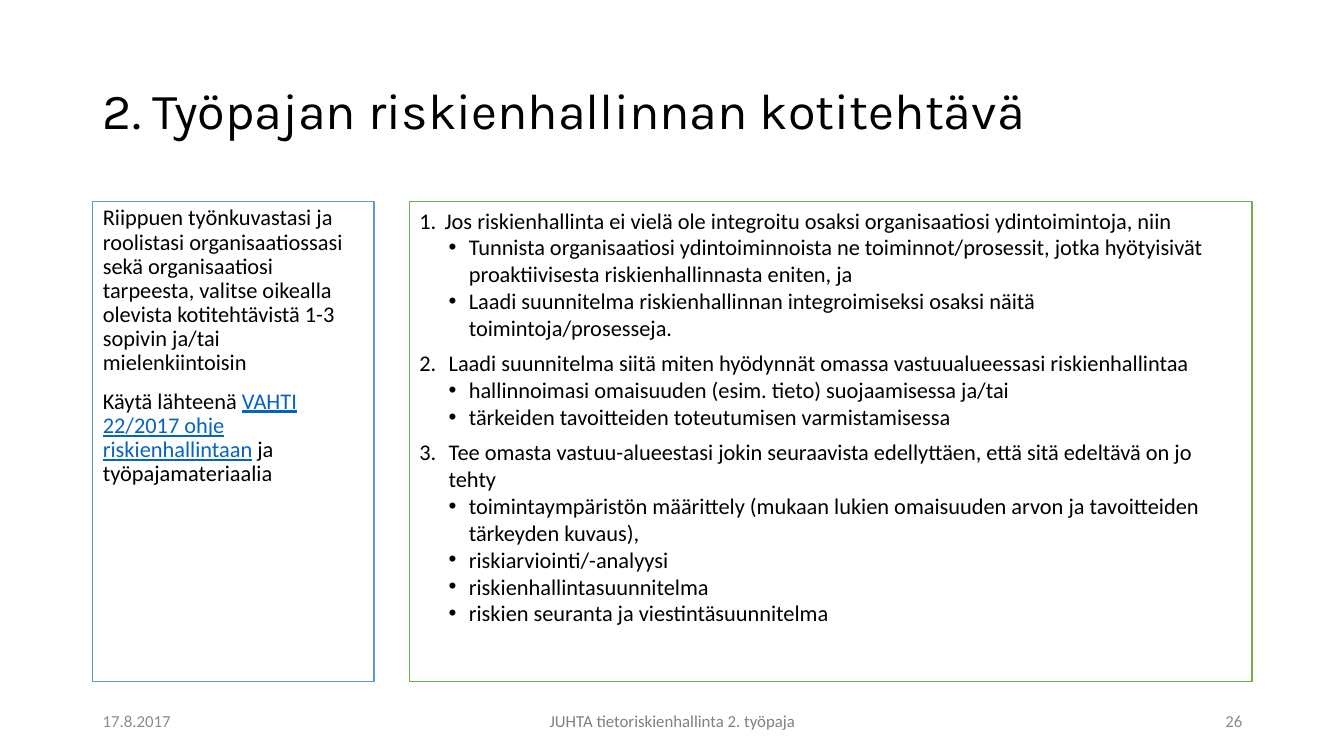
from lxml import etree
from pptx import Presentation
from pptx.dml.color import RGBColor as RGB
from pptx.enum.text import MSO_ANCHOR as Anchor, MSO_AUTO_SIZE as Fit, PP_ALIGN as Align
from pptx.oxml.ns import qn
from pptx.util import Inches, Pt

BLACK = RGB(0x00, 0x00, 0x00)
WHITE = RGB(0xFF, 0xFF, 0xFF)
BLUE = RGB(0x5B, 0x9B, 0xD5)
GREEN = RGB(0x70, 0xAD, 0x47)
LINK = RGB(0x05, 0x63, 0xC1)
GRAY = RGB(0x80, 0x80, 0x80)
PALE = RGB(0x8C, 0x8C, 0x8C)

INTRO = [
    [("Riippuen työnkuvastasi ja roolistasi organisaatiossasi sekä organisaatiosi tarpeesta, "
      "valitse oikealla olevista kotitehtävistä 1-3 sopivin ja/tai mielenkiintoisin", False)],
    [("Käytä lähteenä ", False), ("VAHTI 22/2017 ohje riskienhallintaan", True),
     (" ja työpajamateriaalia", False)],
]
TASKS = [
    ("Jos riskienhallinta ei vielä ole integroitu osaksi organisaatiosi ydintoimintoja, niin", [
        "Tunnista organisaatiosi ydintoiminnoista ne toiminnot/prosessit, jotka hyötyisivät "
        "proaktiivisesta riskienhallinnasta eniten, ja",
        "Laadi suunnitelma riskienhallinnan integroimiseksi osaksi näitä toimintoja/prosesseja."]),
    ("Laadi suunnitelma siitä miten hyödynnät omassa vastuualueessasi riskienhallintaa", [
        "hallinnoimasi omaisuuden (esim. tieto) suojaamisessa ja/tai",
        "tärkeiden tavoitteiden toteutumisen varmistamisessa"]),
    ("Tee omasta vastuu-alueestasi jokin seuraavista edellyttäen, että sitä edeltävä on jo tehty", [
        "toimintaympäristön määrittely (mukaan lukien omaisuuden arvon ja tavoitteiden "
        "tärkeyden kuvaus),",
        "riskiarviointi/-analyysi",
        "riskienhallintasuunnitelma",
        "riskien seuranta ja viestintäsuunnitelma"]),
]


def place(shape, box):
    """Move a shape to a box given in inches."""
    shape.left, shape.top, shape.width, shape.height = map(Inches, box)


def style(font, size, color, name="Calibri"):
    """Set the look of a font."""
    font.name, font.size, font.color.rgb = name, Pt(size), color


def mark(para, tag, left=0, hang=0, **attrs):
    """Give a paragraph its indent and its bullet element."""
    props = para._p.get_or_add_pPr()
    props.set("marL", str(Inches(left)))
    props.set("indent", str(-Inches(hang)))
    etree.SubElement(props, qn(tag), attrs)


def panel(shape, box, color):
    """Frame a body placeholder and return its text frame."""
    place(shape, box)
    shape.fill.solid()
    shape.fill.fore_color.rgb = WHITE
    shape.line.color.rgb = color
    shape.line.width = Pt(1)
    frame = shape.text_frame
    frame.auto_size = Fit.NONE
    frame.vertical_anchor = Anchor.TOP
    return frame


def add_para(frame, first):
    """Return the first paragraph of a frame or a new one."""
    return frame.paragraphs[0] if first else frame.add_paragraph()


def add_title(shape, box):
    """Fill the title placeholder."""
    place(shape, box)
    frame = shape.text_frame
    frame.text = "2. Työpajan riskienhallinnan kotitehtävä"
    frame.auto_size = Fit.NONE
    frame.vertical_anchor = Anchor.MIDDLE
    para = frame.paragraphs[0]
    para.alignment = Align.LEFT
    para.line_spacing = 0.9
    style(para.runs[0].font, 36, BLACK, "Karla")


def add_intro(shape, box):
    """Fill the left panel with instructions."""
    frame = panel(shape, box, BLUE)
    for i, parts in enumerate(INTRO):
        para = add_para(frame, i == 0)
        mark(para, "a:buNone")
        para.line_spacing = 0.9
        para.space_before = Pt(10 if i else 0)
        for text, link in parts:
            run = para.add_run()
            run.text = text
            style(run.font, 16, LINK if link else BLACK)
            run.font.underline = link


def add_tasks(shape, box):
    """Fill the right panel with numbered tasks and their points."""
    frame = panel(shape, box, GREEN)
    for num, (task, points) in enumerate(TASKS, 1):
        for i, text in enumerate([task, *points]):
            para = add_para(frame, num == 1 and i == 0)
            para.text = text
            if i:
                para.level = 1
                mark(para, "a:buChar", 0.49, 0.2, char="•")
            else:
                left = 0.25 if num == 1 else 0.29
                mark(para, "a:buAutoNum", left, left, type="arabicPeriod", startAt=str(num))
            para.line_spacing = 1.0
            para.space_before = Pt(6 if num > 1 and i == 0 else 0)
            style(para.runs[0].font, 16, BLACK)


def add_foot(slide, box):
    """Place the date, the event and the page number along a strip."""
    left, top, width, high = box
    cells = [
        ("17.8.2017", left, 3, Align.LEFT, PALE),
        ("JUHTA tietoriskienhallinta 2. työpaja", left + width / 2 - 2.25, 4.5, Align.CENTER, GRAY),
        ("26", left + width - 3, 3, Align.RIGHT, PALE),
    ]
    for text, x, wide, align, color in cells:
        frame = slide.shapes.add_textbox(*map(Inches, (x, top, wide, high))).text_frame
        frame.word_wrap = True
        frame.vertical_anchor = Anchor.MIDDLE
        frame.text = text
        para = frame.paragraphs[0]
        para.alignment = align
        style(para.runs[0].font, 12, color)


def main():
    """Build the slide and save it."""
    deck = Presentation()
    deck.slide_width, deck.slide_height = Inches(13.33), Inches(7.5)
    slide = deck.slides.add_slide(deck.slide_layouts[3])
    title, intro, tasks = slide.placeholders
    add_title(title, (0.92, 0.4, 11.5, 1.45))
    add_intro(intro, (0.92, 2, 2.79, 4.76))
    add_tasks(tasks, (4.06, 2, 8.36, 4.76))
    add_foot(slide, (0.92, 6.95, 11.5, 0.4))
    deck.save("out.pptx")


if __name__ == "__main__":
    main()
